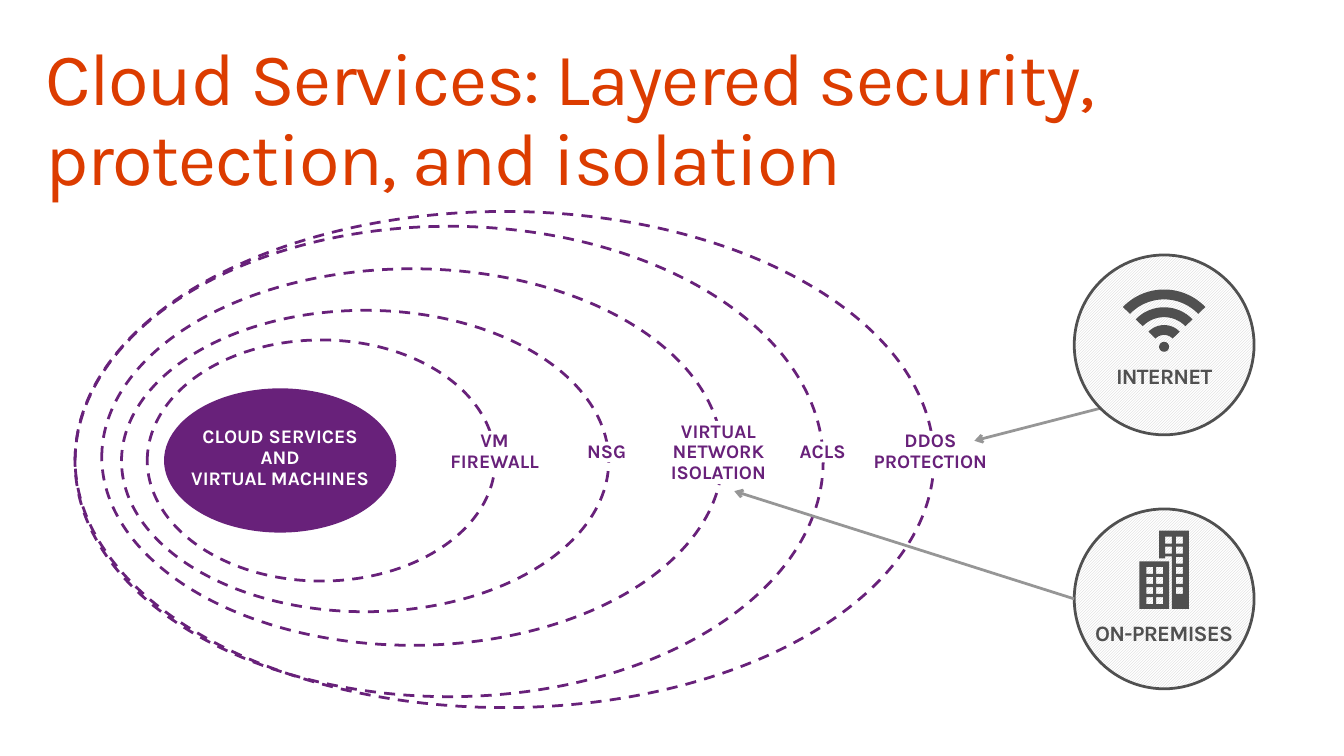
import math
from pptx import Presentation
from pptx.dml.color import RGBColor
from pptx.enum.dml import MSO_LINE, MSO_PATTERN
from pptx.enum.shapes import MSO_CONNECTOR, MSO_SHAPE
from pptx.enum.text import MSO_ANCHOR, PP_ALIGN
from pptx.oxml.xmlchemy import OxmlElement
from pptx.util import Inches, Pt

OVAL, RECT = MSO_SHAPE.OVAL, MSO_SHAPE.RECTANGLE
DASH = MSO_LINE.DASH
HATCH = MSO_PATTERN.LIGHT_UPWARD_DIAGONAL
STRAIGHT = MSO_CONNECTOR.STRAIGHT
TOP, MIDDLE = MSO_ANCHOR.TOP, MSO_ANCHOR.MIDDLE
LEFT, CENTER = PP_ALIGN.LEFT, PP_ALIGN.CENTER

HEX = {"orange": "DC3C00", "purple": "68217A", "white": "FFFFFF",
       "dark": "505050", "gray": "969696", "hatch": "CDCDCD"}
RINGS = [
    ((1.23, 3.14, 4.93, 3.05), "NSG", (5.94, 4.47, 0.4, 0.21)),
    ((1.49, 3.44, 3.52, 2.44), "VM\nFIREWALL", (4.54, 4.36, 0.93, 0.42)),
    ((0.76, 2.29, 7.57, 4.76), "ACLS", (8.09, 4.47, 0.47, 0.21)),
    ((1.03, 2.72, 6.28, 3.81), "VIRTUAL\nNETWORK\nISOLATION", (6.52, 4.26, 1.5, 0.64)),
    ((0.76, 2.14, 8.69, 5.02), "DDOS\nPROTECTION", (8.81, 4.36, 1.21, 0.42)),
]


def color(name):
    """Return a named colour."""
    return RGBColor.from_string(HEX[name])


def write(shape, text, size, tint, bold=True, align=CENTER, anchor=TOP,
          pad=(0, 0), wrap=False, space=0):
    """Put formatted text into a shape."""
    frame = shape.text_frame
    frame.word_wrap, frame.vertical_anchor = wrap, anchor
    frame.margin_left = frame.margin_right = Inches(pad[0])
    frame.margin_top = frame.margin_bottom = Inches(pad[1])
    for i, line in enumerate(text.split("\n")):
        para = frame.paragraphs[0] if i == 0 else frame.add_paragraph()
        para.alignment, para.line_spacing = align, 0.9
        run = para.add_run()
        run.text = line
        font = run.font
        font.name, font.size, font.bold = "Karla", Pt(size), bold
        font.color.rgb = color(tint)
        if space:
            run._r.get_or_add_rPr().set("spc", str(space))


def text_box(slide, box, text, **style):
    """Add a text box with formatted text."""
    write(slide.shapes.add_textbox(*map(Inches, box)), text, **style)


def add_form(slide, kind, box, fill=None, line=None):
    """Add a preset shape with plain fill and line."""
    form = slide.shapes.add_shape(kind, *map(Inches, box))
    form.shadow.inherit = False
    if fill:
        form.fill.solid()
        form.fill.fore_color.rgb = color(fill)
    else:
        form.fill.background()
    if line:
        form.line.color.rgb = color(line)
        form.line.width = Pt(2)
    else:
        form.line.fill.background()
    return form


def add_ring(slide, box, text, spot):
    """Draw a dashed security layer and its label."""
    add_form(slide, OVAL, box, line="purple").line.dash_style = DASH
    write(add_form(slide, RECT, spot, fill="white"), text, size=14,
          tint="purple", anchor=MIDDLE, wrap=spot[2] > 1.4)


def add_core(slide, box):
    """Draw the protected core of the layers."""
    x, y, w, h = box
    add_form(slide, OVAL, box, fill="purple")
    text_box(slide, (x, y + 0.23, w, 0.96),
             "CLOUD SERVICES\nAND\nVIRTUAL MACHINES",
             size=14, tint="white", pad=(0.2, 0.16))


def add_icon(slide, loops):
    """Draw closed outlines as one dark shape."""
    pen = None
    for loop in loops:
        dots = [(Inches(x), Inches(y)) for x, y in loop]
        if pen is None:
            pen = slide.shapes.build_freeform(*dots[0])
        else:
            pen.move_to(*dots[0])
        pen.add_line_segments(dots[1:], close=True)
    icon = pen.convert_to_shape()
    icon.shadow.inherit = False
    icon.fill.solid()
    icon.fill.fore_color.rgb = color("dark")
    icon.line.fill.background()


def arc(x, y, radius, start, end):
    """Return points on an arc, with degrees from straight up."""
    steps = [math.radians(start + (end - start) * i / 32) for i in range(33)]
    return [(x + radius * math.sin(a), y - radius * math.cos(a)) for a in steps]


def block(x, y, w, h):
    """Return the corners of a block."""
    return [(x, y), (x + w, y), (x + w, y + h), (x, y + h)]


def draw_wifi(slide, x, y):
    """Draw a signal icon around its dot."""
    bands = [arc(x, y, r, -46, 46) + arc(x, y, r - 0.1, 46, -46)
             for r in (0.22, 0.4, 0.58)]
    add_icon(slide, [arc(x, y, 0.05, 0, 360)] + bands)


def draw_towers(slide, x, y):
    """Draw two office towers with window grids."""
    tall = [(0.2, 0), (0.5, 0), (0.5, 0.79), (0.33, 0.79), (0.33, 0.26),
            (0.26, 0.26), (0.26, 0.28), (0.2, 0.28)]
    loops = [[(x + a, y + b) for a, b in tall], block(x, y + 0.31, 0.3, 0.48)]
    for left, first, count in ((0.26, 0, 2), (0.37, 0, 6), (0.07, 3, 4), (0.17, 3, 4)):
        loops += [block(x + left, y + 0.06 + 0.102 * row, 0.07, 0.07)
                  for row in range(first, first + count)]
    add_icon(slide, loops)


def add_site(slide, box, text, drop):
    """Draw a hatched circle with its caption."""
    x, y, w, h = box
    disc = add_form(slide, OVAL, box, line="dark")
    disc.fill.patterned()
    disc.fill.pattern = HATCH
    disc.fill.fore_color.rgb = color("hatch")
    disc.fill.back_color.rgb = color("white")
    text_box(slide, (x, y + drop, w, 0.57), text, size=16, tint="dark",
             anchor=MIDDLE, pad=(0.2, 0.16), space=-50)


def add_arrow(slide, start, end):
    """Draw a gray arrow."""
    link = slide.shapes.add_connector(STRAIGHT, *map(Inches, start + end))
    link.line.color.rgb = color("gray")
    link.line.width = Pt(2)
    tip = OxmlElement("a:tailEnd")
    tip.set("type", "arrow")
    link.line._get_or_add_ln().append(tip)
    link._element.spPr.append(OxmlElement("a:effectLst"))


def main():
    """Build and save the slide."""
    deck = Presentation()
    deck.slide_width, deck.slide_height = Inches(13.6), Inches(7.65)
    slide = deck.slides.add_slide(deck.slide_layouts[6])
    text_box(slide, (0.3, 0.32, 13, 1),
             "Cloud Services: Layered security, protection, and isolation",
             size=54, tint="orange", bold=False, align=LEFT,
             pad=(0.16, 0.1), wrap=True, space=-100)
    for ring in RINGS:
        add_ring(slide, *ring)
    add_core(slide, (1.66, 3.93, 2.35, 1.46))
    add_site(slide, (10.87, 5.15, 1.82, 1.82), "ON-PREMISES", 0.98)
    draw_towers(slide, 11.53, 5.37)
    add_arrow(slide, (10.87, 6.06), (7.43, 4.97))
    add_arrow(slide, (11.14, 4.13), (9.86, 4.46))
    add_site(slide, (10.87, 2.58, 1.82, 1.82), "INTERNET", 0.95)
    draw_wifi(slide, 11.78, 3.51)
    deck.save("out.pptx")


if __name__ == "__main__":
    main()
